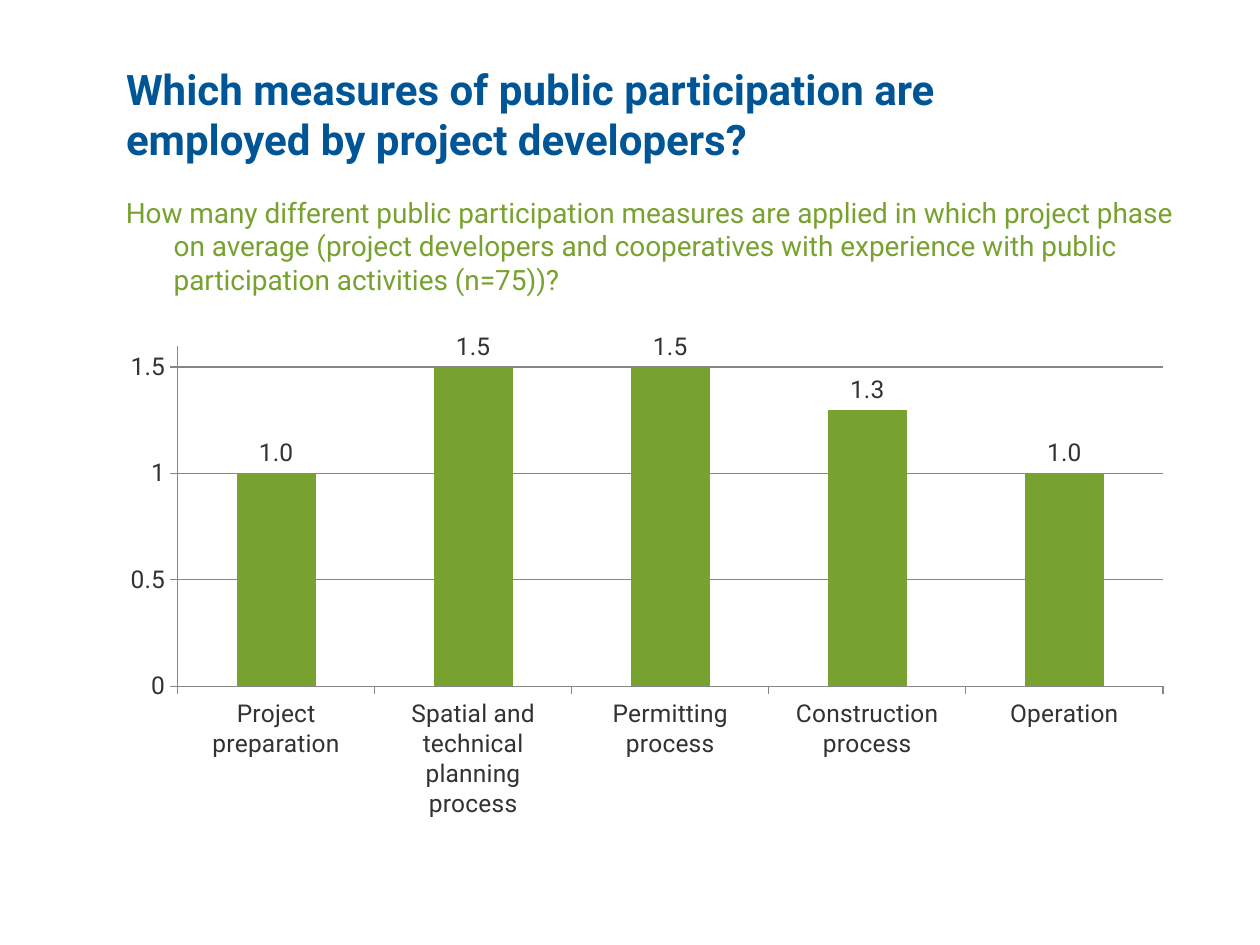
from dataclasses import dataclass

from lxml import etree
from pptx import Presentation
from pptx.chart.data import CategoryChartData
from pptx.dml.color import RGBColor
from pptx.enum.chart import XL_CHART_TYPE, XL_LABEL_POSITION, XL_TICK_MARK
from pptx.enum.text import MSO_ANCHOR, MSO_AUTO_SIZE, PP_ALIGN
from pptx.oxml.ns import qn
from pptx.util import Inches, Pt

COLUMN = XL_CHART_TYPE.COLUMN_CLUSTERED
ABOVE = XL_LABEL_POSITION.OUTSIDE_END
OUTSIDE = XL_TICK_MARK.OUTSIDE
NONE = XL_TICK_MARK.NONE
TOP = MSO_ANCHOR.TOP
LEFT = PP_ALIGN.LEFT
FIXED = MSO_AUTO_SIZE.NONE
GROW = MSO_AUTO_SIZE.SHAPE_TO_FIT_TEXT


@dataclass(frozen=True)
class Theme:
    font: str = "Roboto"
    blue: str = "005596"
    green: str = "78A22F"
    ink: str = "323232"
    grey: str = "868686"
    title: int = 24
    lead: int = 16
    label: int = 14


THEME = Theme()
WIDTH, HEIGHT = 10, 7.5
PHASES = {
    "Project preparation": 1.0,
    "Spatial and technical planning process": 1.5,
    "Permitting process": 1.5,
    "Construction process": 1.3,
    "Operation": 1.0,
}


def share(left, top, width, height):
    return [Inches(WIDTH * left), Inches(HEIGHT * top),
            Inches(WIDTH * width), Inches(HEIGHT * height)]


def style(font, size, color, bold=False):
    font.name = THEME.font
    font.size = Pt(size)
    font.bold = bold
    font.color.rgb = RGBColor.from_string(color)


def fill_text(shape, text, fit):
    frame = shape.text_frame
    frame.word_wrap = True
    frame.auto_size = fit
    frame.vertical_anchor = TOP
    frame.text = text
    para = frame.paragraphs[0]
    para.alignment = LEFT
    para.space_before = Pt(0)
    return para


def add_title(slide, box):
    title = slide.shapes.title
    title.left, title.top, title.width, title.height = box
    para = fill_text(title, "Which measures of public participation are "
                     "employed by project developers?", FIXED)
    para.line_spacing = 1.0
    style(para.font, THEME.title, THEME.blue, True)


def add_lead(slide, box):
    lead = slide.shapes.add_textbox(*box)
    para = fill_text(lead, "How many different public participation measures "
                     "are applied in which project phase on average (project "
                     "developers and cooperatives with experience with public "
                     "participation activities (n=75))?", GROW)
    props = para._p.get_or_add_pPr()
    props.set("marL", str(Inches(0.38)))
    props.set("indent", str(Inches(-0.38)))
    style(para.font, THEME.lead, THEME.green)


def set_plot(chart, **place):
    area = chart._chartSpace.chart.plotArea
    for old in area.findall(qn("c:layout")):
        area.remove(old)
    layout = etree.Element(qn("c:layout"))
    area.insert(0, layout)
    manual = etree.SubElement(layout, qn("c:manualLayout"))
    modes = {"layoutTarget": "inner", "xMode": "edge", "yMode": "edge"}
    for name, value in (modes | place).items():
        etree.SubElement(manual, qn(f"c:{name}")).set("val", str(value))


def rule(line):
    line.color.rgb = RGBColor.from_string(THEME.grey)
    line.width = Pt(0.75)


def add_bars(slide, box):
    data = CategoryChartData(number_format="General")
    data.categories = list(PHASES)
    data.add_series("Series 1", list(PHASES.values()))
    chart = slide.shapes.add_chart(COLUMN, *box, data).chart
    chart.has_title = False
    chart.has_legend = False
    style(chart.font, THEME.label, THEME.ink)
    set_plot(chart, x=0.06, y=0.03, w=0.92, h=0.68)

    scale = chart.value_axis
    scale.minimum_scale, scale.maximum_scale = 0, 1.6
    scale.major_unit = 0.5
    scale.has_major_gridlines = True
    rule(scale.major_gridlines.format.line)
    for axis in (scale, chart.category_axis):
        axis.major_tick_mark = OUTSIDE
        axis.minor_tick_mark = NONE
        rule(axis.format.line)

    plot = chart.plots[0]
    plot.gap_width = 150
    plot.vary_by_categories = False
    bars = plot.series[0]
    bars.format.fill.solid()
    bars.format.fill.fore_color.rgb = RGBColor.from_string(THEME.green)
    labels = bars.data_labels
    labels.show_value = True
    labels.number_format = "#,##0.0"
    labels.number_format_is_linked = False
    labels.position = ABOVE
    style(labels.font, THEME.label, THEME.ink)


def main():
    deck = Presentation()
    deck.slide_width, deck.slide_height = Inches(WIDTH), Inches(HEIGHT)
    slide = deck.slides.add_slide(deck.slide_layouts[5])
    add_title(slide, share(0.09, 0.06, 0.74, 0.09))
    add_bars(slide, share(0.09, 0.35, 0.85, 0.53))
    add_lead(slide, share(0.09, 0.2, 0.87, 0.12))
    deck.save("out.pptx")


if __name__ == "__main__":
    main()
